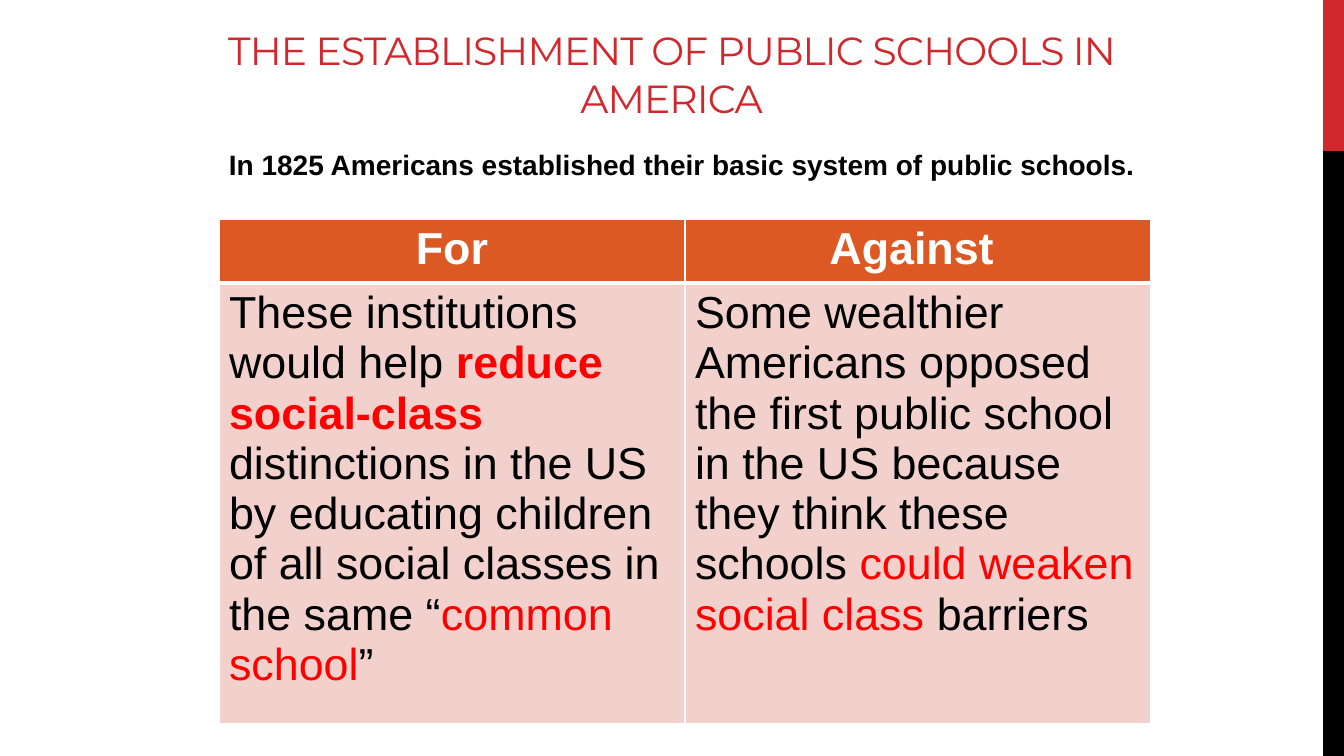
import pptx
import pptx.dml.color
import pptx.enum.shapes
import pptx.enum.text
import pptx.oxml
import pptx.oxml.ns
import pptx.util

RGBColor = pptx.dml.color.RGBColor
PP_ALIGN = pptx.enum.text.PP_ALIGN

RED = RGBColor(0xD1, 0x28, 0x2E)
BRIGHT_RED = RGBColor(0xFF, 0x00, 0x00)
ORANGE = RGBColor(0xDC, 0x59, 0x24)
PINK = RGBColor(0xF2, 0xD1, 0xCD)
BLACK = RGBColor(0x00, 0x00, 0x00)
WHITE = RGBColor(0xFF, 0xFF, 0xFF)

EMU_PER_PX = 914400 / 100.8
SLIDE_W, SLIDE_H = 1344, 756

# Each cell is a list of runs: text, colour, bold
HEADER = [
    [("For", WHITE, True)],
    [("Against ", WHITE, True)],
]
ARGUMENTS = [
    [
        ("These institutions would help ", BLACK, False),
        ("reduce social-class ", BRIGHT_RED, True),
        ("distinctions in the US by educating children of all social "
         "classes in the same “", BLACK, False),
        ("common school", BRIGHT_RED, False),
        ("”", BLACK, False),
    ],
    [
        ("Some wealthier Americans opposed the first public school in the US "
         "because they think these schools ", BLACK, False),
        ("could weaken social class ", BRIGHT_RED, False),
        ("barriers", BLACK, False),
    ],
]


def px(n):
    return pptx.util.Emu(round(n * EMU_PER_PX))


def add_run(p, text, size, color, bold=False, font="Arial"):
    r = p.add_run()
    r.text = text
    r.font.name = font
    r.font.size = pptx.util.Pt(size)
    r.font.bold = bold
    r.font.color.rgb = color
    return r


def add_bar(slide, top, height, color):
    left = 1323
    sp = slide.shapes.add_shape(
        pptx.enum.shapes.MSO_SHAPE.RECTANGLE,
        px(left), px(top), px(SLIDE_W - left), px(height))
    sp.shadow.inherit = False
    sp.fill.solid()
    sp.fill.fore_color.rgb = color
    sp.line.fill.background()


def set_title(slide, text):
    sp = slide.shapes.title
    sp.left, sp.top, sp.width, sp.height = px(184), px(17), px(975), px(109)
    tf = sp.text_frame
    tf.word_wrap = True
    tf.auto_size = pptx.enum.text.MSO_AUTO_SIZE.NONE
    tf.vertical_anchor = pptx.enum.text.MSO_ANCHOR.BOTTOM
    p = tf.paragraphs[0]
    p.alignment = PP_ALIGN.CENTER
    r = add_run(p, text, 28, RED, font="Montserrat")
    r.font._element.set("spc", "-60")


def add_statement(slide, text):
    sp = slide.shapes.add_textbox(px(219), px(143), px(932), px(50))
    tf = sp.text_frame
    tf.word_wrap = True
    p = tf.paragraphs[0]
    p.space_before = pptx.util.Pt(2)
    add_run(p, text, 20, BLACK, bold=True)


def set_borders(cell, bottom):
    tc_pr = cell._tc.get_or_add_tcPr()
    widths = {"lnL": 1, "lnR": 1, "lnT": 1, "lnB": bottom}
    for i, (side, width) in enumerate(widths.items()):
        ln = pptx.oxml.parse_xml(
            f'<a:{side} {pptx.oxml.ns.nsdecls("a")} '
            f'w="{pptx.util.Pt(width)}"><a:solidFill>'
            f'<a:srgbClr val="{WHITE}"/></a:solidFill></a:{side}>')
        tc_pr.insert(i, ln)


def fill_row(table, row, contents, fill, align, bottom):
    for cell, runs in zip(table.rows[row].cells, contents):
        cell.fill.solid()
        cell.fill.fore_color.rgb = fill
        set_borders(cell, bottom)
        p = cell.text_frame.paragraphs[0]
        p.alignment = align
        for text, color, bold in runs:
            add_run(p, text, 32, color, bold)


def add_debate_table(slide):
    heights = (60, 411)
    table = slide.shapes.add_table(
        2, 2, px(219), px(219), px(932), px(sum(heights))).table
    for row, height in zip(table.rows, heights):
        row.height = px(height)
    fill_row(table, 0, HEADER, ORANGE, PP_ALIGN.CENTER, bottom=3)
    fill_row(table, 1, ARGUMENTS, PINK, PP_ALIGN.LEFT, bottom=1)
    # The shared edge keeps the thick line below the header
    for cell in table.rows[1].cells:
        top = cell._tc.tcPr.find(pptx.oxml.ns.qn("a:lnT"))
        top.set("w", str(pptx.util.Pt(3)))


def main():
    prs = pptx.Presentation()
    prs.slide_width, prs.slide_height = px(SLIDE_W), px(SLIDE_H)
    slide = prs.slides.add_slide(prs.slide_layouts[5])

    # Side bars
    add_bar(slide, 0, 151, RED)
    add_bar(slide, 151, SLIDE_H - 151, BLACK)

    # Heading and statement
    set_title(slide, "THE ESTABLISHMENT OF PUBLIC SCHOOLS IN AMERICA")
    add_statement(slide, "In 1825 Americans established their basic system "
                         "of public schools.")

    # Arguments for and against
    add_debate_table(slide)

    prs.save("out.pptx")


if __name__ == "__main__":
    main()
